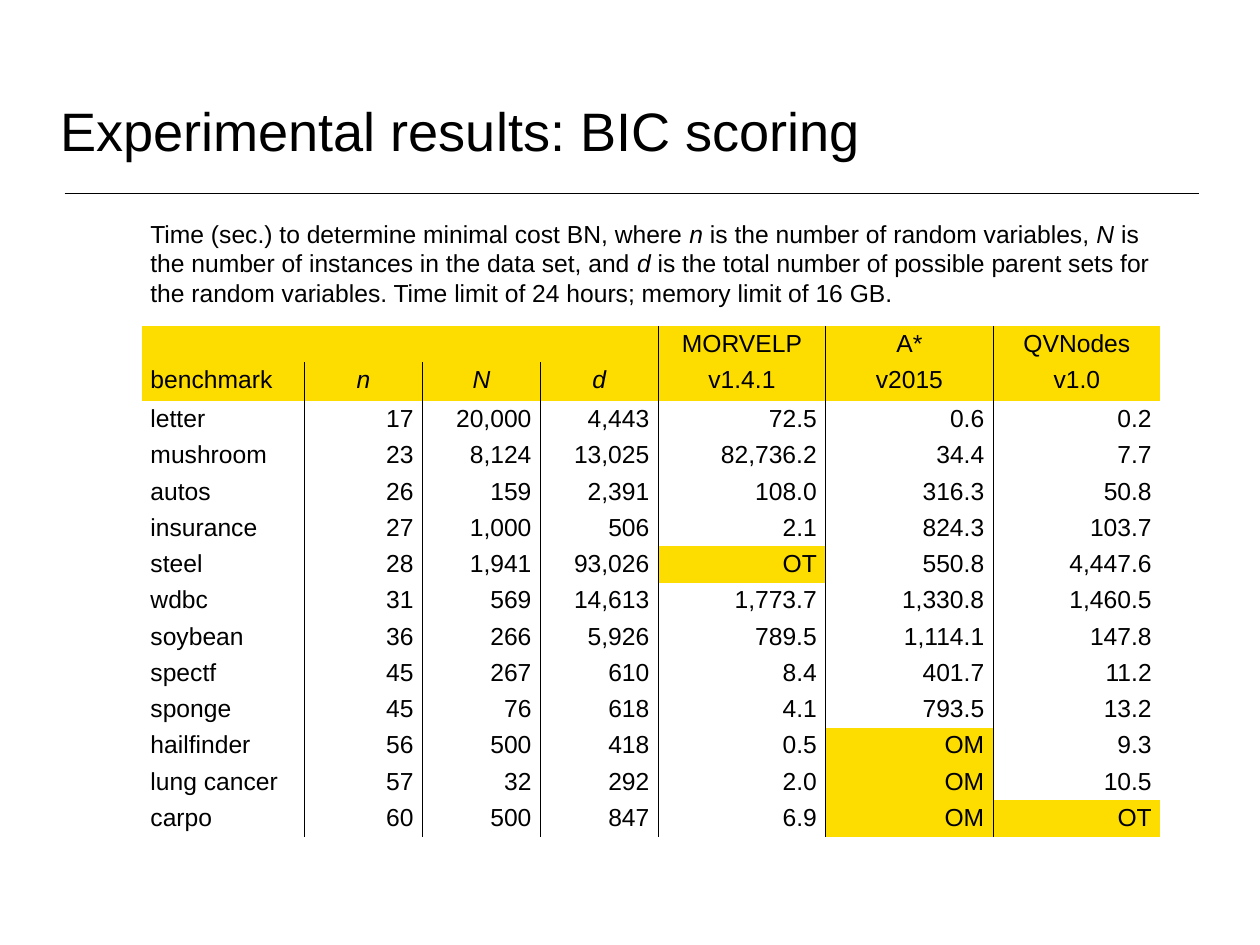
from lxml import etree
from pptx import Presentation
from pptx.dml.color import RGBColor
from pptx.enum.shapes import MSO_CONNECTOR
from pptx.enum.text import MSO_ANCHOR, PP_ALIGN
from pptx.oxml.ns import qn
from pptx.util import Cm, Pt

STRAIGHT = MSO_CONNECTOR.STRAIGHT
BOTTOM = MSO_ANCHOR.BOTTOM
LEFT, CENTER, RIGHT = PP_ALIGN.LEFT, PP_ALIGN.CENTER, PP_ALIGN.RIGHT

FONT = "Arial"
COLORS = {"ink": "000000", "paper": "FFFFFF", "highlight": "FDDD00"}
COL_WIDTHS = [4.67] + [3.38] * 3 + [4.8] * 3
ROW_HEIGHT, SUBHEAD_HEIGHT = 1.04, 1.12
VARIABLES = ("n", "N", "d")
FAILURES = ("OT", "OM")

HEADERS = [
    ["", "", "", "", "MORVELP", "A*", "QVNodes"],
    ["benchmark", "n", "N", "d", "v1.4.1", "v2015", "v1.0"],
]
RESULTS = [
    ["letter", "17", "20,000", "4,443", "72.5", "0.6", "0.2"],
    ["mushroom", "23", "8,124", "13,025", "82,736.2", "34.4", "7.7"],
    ["autos", "26", "159", "2,391", "108.0", "316.3", "50.8"],
    ["insurance", "27", "1,000", "506", "2.1", "824.3", "103.7"],
    ["steel", "28", "1,941", "93,026", "OT", "550.8", "4,447.6"],
    ["wdbc", "31", "569", "14,613", "1,773.7", "1,330.8", "1,460.5"],
    ["soybean", "36", "266", "5,926", "789.5", "1,114.1", "147.8"],
    ["spectf", "45", "267", "610", "8.4", "401.7", "11.2"],
    ["sponge", "45", "76", "618", "4.1", "793.5", "13.2"],
    ["hailfinder", "56", "500", "418", "0.5", "OM", "9.3"],
    ["lung cancer", "57", "32", "292", "2.0", "OM", "10.5"],
    ["carpo", "60", "500", "847", "6.9", "OM", "OT"],
]
CAPTION = [
    "Time (sec.) to determine minimal cost BN, where ", "n",
    " is the number of random variables, ", "N",
    " is the number of instances in the data set, and ", "d",
    " is the total number of possible parent sets for the random variables. "
    "Time limit of 24 hours; memory limit of 16 GB.",
]


def rgb(name):
    """Return the named colour."""
    return RGBColor.from_string(COLORS[name])


def add_run(p, text, size=20):
    """Add a run, in italics if it names a variable."""
    r = p.add_run()
    r.text = text
    r.font.name = FONT
    r.font.size = Pt(size)
    r.font.italic = text in VARIABLES
    r.font.color.rgb = rgb("ink")


def add_title(s, text):
    """Place and fill the title placeholder."""
    sp = s.shapes.title
    sp.left, sp.top, sp.width, sp.height = Cm(1.57), Cm(0.91), Cm(32.94), Cm(3.89)
    tf = sp.text_frame
    tf.vertical_anchor = BOTTOM
    tf.margin_left = tf.margin_right = tf.margin_top = tf.margin_bottom = Cm(0.15)
    p = tf.paragraphs[0]
    p.alignment = LEFT
    add_run(p, text, 44)


def add_rule(s):
    """Draw the line under the title."""
    line = s.shapes.add_connector(STRAIGHT, Cm(1.85), Cm(5.54), Cm(34.37), Cm(5.54))
    line.line.color.rgb = rgb("ink")
    line.line.width = Pt(0.75)
    etree.SubElement(line._element.spPr, qn("a:effectLst"))


def add_caption(s, parts):
    """Add the explanation above the table."""
    sp = s.shapes.add_textbox(Cm(4.06), Cm(6.15), Cm(29.21), Cm(2.82))
    tf = sp.text_frame
    tf.word_wrap = True
    for part in parts:
        add_run(tf.paragraphs[0], part)


def set_border(cell, side, color=None):
    """Set one cell border, or clear it when no colour is given."""
    ln = etree.SubElement(cell._tc.get_or_add_tcPr(), qn(f"a:ln{side}"), w=str(Pt(1)))
    if color is None:
        etree.SubElement(ln, qn("a:noFill"))
    else:
        fill = etree.SubElement(ln, qn("a:solidFill"))
        etree.SubElement(fill, qn("a:srgbClr"), val=COLORS[color])


def fill_cell(cell, text, col, is_header):
    """Write and format one table cell."""
    set_border(cell, "L", "ink" if col > 0 else "paper")
    set_border(cell, "R", "ink" if col < len(COL_WIDTHS) - 1 else "paper")
    set_border(cell, "T")
    set_border(cell, "B")
    cell.fill.solid()
    marked = is_header or text in FAILURES
    cell.fill.fore_color.rgb = rgb("highlight" if marked else "paper")
    cell.margin_top = cell.margin_bottom = Cm(0.11)
    p = cell.text_frame.paragraphs[0]
    p.alignment = LEFT if col == 0 else CENTER if is_header else RIGHT
    if text:
        add_run(p, text)


def add_results(s):
    """Add the table of solving times."""
    rows = HEADERS + RESULTS
    heights = [ROW_HEIGHT, SUBHEAD_HEIGHT] + [ROW_HEIGHT] * len(RESULTS)
    table = s.shapes.add_table(len(rows), len(COL_WIDTHS), Cm(4.06), Cm(9.35),
                               Cm(sum(COL_WIDTHS)), Cm(sum(heights))).table
    table.first_row = table.horz_banding = False
    for column, width in zip(table.columns, COL_WIDTHS):
        column.width = Cm(width)
    for i, (values, height) in enumerate(zip(rows, heights)):
        table.rows[i].height = Cm(height)
        for j, text in enumerate(values):
            fill_cell(table.cell(i, j), text, j, i < len(HEADERS))
    table.cell(0, 0).merge(table.cell(0, 3))


def main():
    """Build the slide and save it."""
    prs = Presentation()
    prs.slide_width, prs.slide_height = Cm(36.12), Cm(27.1)
    s = prs.slides.add_slide(prs.slide_layouts[5])
    add_rule(s)
    add_title(s, "Experimental results: BIC scoring")
    add_results(s)
    add_caption(s, CAPTION)
    prs.save("out.pptx")


if __name__ == "__main__":
    main()
